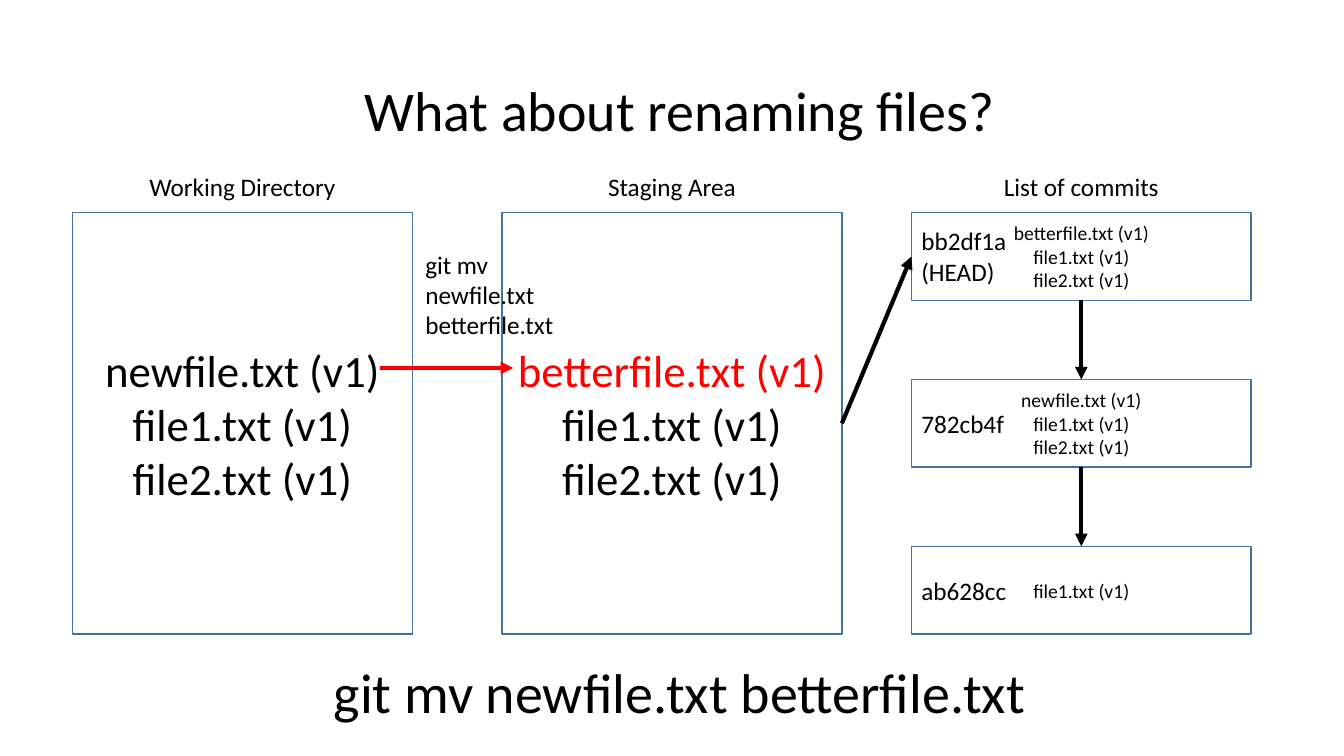
from dataclasses import dataclass

from lxml.etree import SubElement
from pptx import Presentation
from pptx.dml.color import RGBColor
from pptx.enum.shapes import MSO_CONNECTOR, MSO_SHAPE
from pptx.enum.text import MSO_ANCHOR, PP_ALIGN
from pptx.oxml.ns import qn
from pptx.util import Inches, Pt

BLACK, RED, BLUE = "000000", "FF0000", "43739E"
FONT = "Calibri"

# Grid, in inches: three columns, and three commit rows at an equal pitch
LEFTS = (0.72, 4.98, 9.04)
WIDE = 3.37
TOP, TALL = 2.11, 4.18
ROW = 0.87
PITCH = (TALL - ROW) / 2
MID = LEFTS[2] + WIDE / 2


@dataclass
class Area:
    left: float
    top: float
    width: float
    height: float


@dataclass
class Style:
    size: int
    align: PP_ALIGN = PP_ALIGN.CENTER
    anchor: MSO_ANCHOR = MSO_ANCHOR.MIDDLE
    spacing: float = 1.0


@dataclass
class Commit:
    code: str
    files: list[str]
    label: float  # height of the code label


@dataclass
class Arrow:
    start: tuple[float, float]
    end: tuple[float, float]
    hue: str = BLACK


HEAD = Style(40, spacing=0.9)
LABEL = Style(18, anchor=MSO_ANCHOR.TOP)
NOTE = Style(18, PP_ALIGN.LEFT, MSO_ANCHOR.TOP)
FILES = Style(32)
SMALL = Style(14)

OLD, NEW = "newfile.txt (v1)", "betterfile.txt (v1)"
REST = ["file1.txt (v1)", "file2.txt (v1)"]
NAMES = ("Working Directory", "Staging Area", "List of commits")
STAGES = ([OLD, *REST], [NEW, *REST])
COMMITS = (
    Commit("bb2df1a (HEAD)", [NEW, *REST], 0.71),
    Commit("782cb4f", [OLD, *REST], 0.4),
    Commit("ab628cc", REST[:1], 0.4),
)
ARROWS = (
    Arrow((3.77, 3.65), (5.09, 3.65), RED),
    Arrow((LEFTS[1] + WIDE, TOP + TALL / 2), (LEFTS[2], TOP + ROW / 2)),
    *(Arrow((MID, TOP + PITCH * n + ROW), (MID, TOP + PITCH * (n + 1)))
      for n in range(2)),
)


def paint(text: str) -> RGBColor:
    return RGBColor.from_string(text)


def assign(item, values: dict) -> None:
    """Set each named attribute of the item."""
    for name, value in values.items():
        setattr(item, name, value)


def place(area: Area) -> list[int]:
    return [Inches(n) for n in (area.left, area.top, area.width, area.height)]


def write(shape, lines: list[str], style: Style, first: str = BLACK) -> None:
    """Fill the shape with lines; the first may have its own colour."""
    frame = shape.text_frame
    assign(frame, {"word_wrap": True, "vertical_anchor": style.anchor})
    for n, line in enumerate(lines):
        para = frame.add_paragraph() if n else frame.paragraphs[0]
        assign(para, {"alignment": style.align, "line_spacing": style.spacing})
        run = para.add_run()
        run.text = line
        assign(run.font, {"name": FONT, "size": Pt(style.size)})
        run.font.color.rgb = paint(BLACK if n else first)


def add_text(slide, area: Area, lines: list[str], style: Style) -> None:
    write(slide.shapes.add_textbox(*place(area)), lines, style)


def add_box(slide, area: Area, lines: list[str], style: Style,
            first: str = BLACK) -> None:
    box = slide.shapes.add_shape(MSO_SHAPE.RECTANGLE, *place(area))
    box.shadow.inherit = False
    box.fill.background()
    box.line.color.rgb = paint(BLUE)
    box.line.width = Pt(1)
    write(box, lines, style, first)


def add_arrow(slide, arrow: Arrow) -> None:
    ends = [Inches(n) for n in (*arrow.start, *arrow.end)]
    link = slide.shapes.add_connector(MSO_CONNECTOR.STRAIGHT, *ends)
    link.line.color.rgb = paint(arrow.hue)
    link.line.width = Pt(3)
    SubElement(link.line._get_or_add_ln(), qn("a:tailEnd"), type="triangle")
    SubElement(link._element.spPr, qn("a:effectLst"))


def main() -> None:
    deck = Presentation()
    assign(deck, {"slide_width": Inches(13.33), "slide_height": Inches(7.5)})
    slide = deck.slides.add_slide(deck.slide_layouts[6])

    add_text(slide, Area(0.54, 0.4, 12.4, 1.45),
             ["What about renaming files?"], HEAD)
    for left, name in zip(LEFTS, NAMES):
        add_text(slide, Area(left + 0.2, 1.65, WIDE - 0.4, 0.4), [name], LABEL)
    for left, files, hue in zip(LEFTS, STAGES, (BLACK, RED)):
        add_box(slide, Area(left, TOP, WIDE, TALL), files, FILES, hue)
    for n, commit in enumerate(COMMITS):
        top = TOP + PITCH * n
        add_box(slide, Area(LEFTS[2], top, WIDE, ROW), commit.files, SMALL)
        inset = (ROW - commit.label) / 2
        add_text(slide, Area(LEFTS[2], top + inset, 1.26, commit.label),
                 [commit.code], NOTE)
    for arrow in ARROWS:
        add_arrow(slide, arrow)
    add_text(slide, Area(4.12, 2.42, 1.5, 1.01),
             ["git mv newfile.txt", "betterfile.txt"], NOTE)
    add_text(slide, Area(0.54, 6.3, 12.4, 1.2),
             ["git mv newfile.txt betterfile.txt"], HEAD)
    deck.save("out.pptx")


if __name__ == "__main__":
    main()
